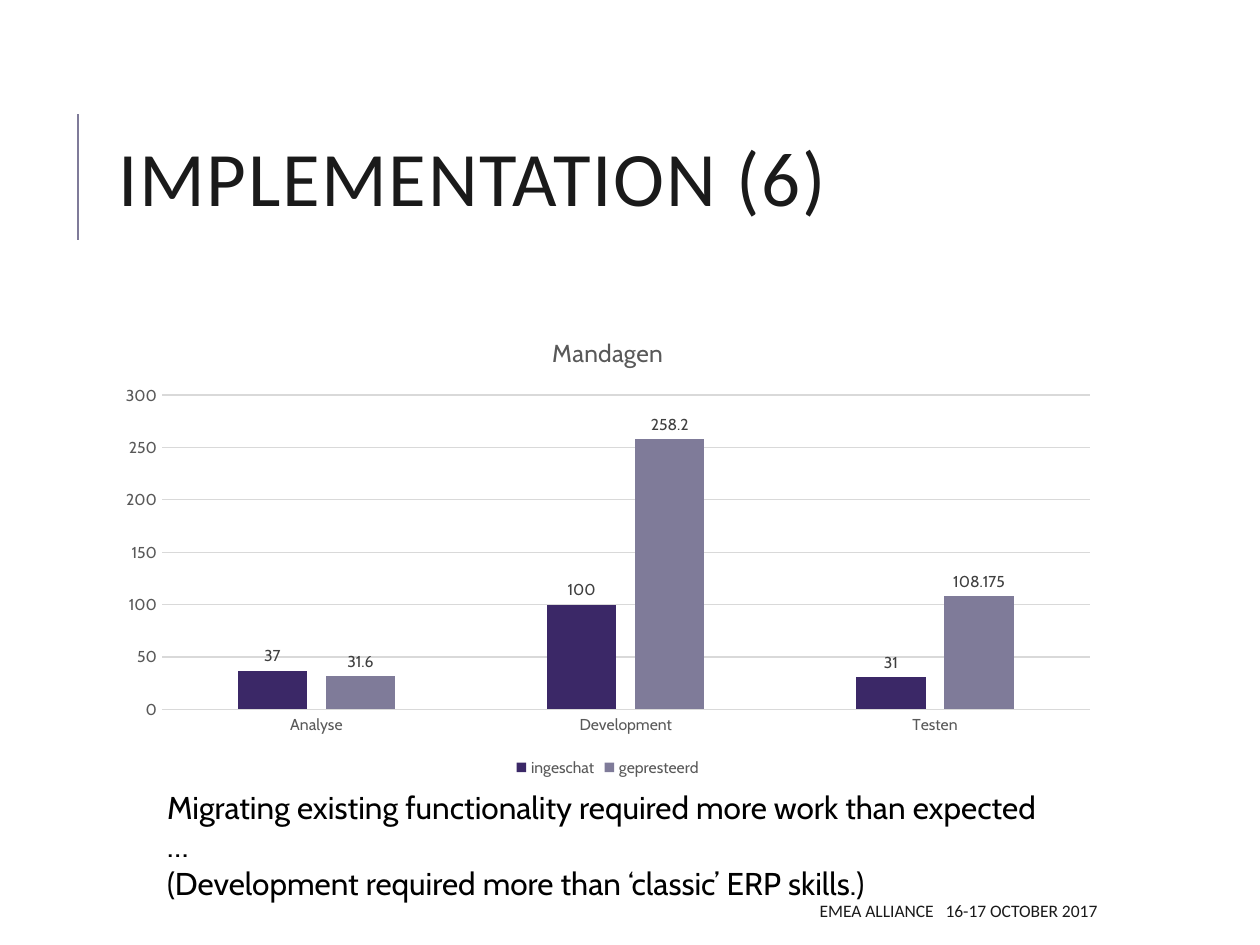
from lxml.etree import SubElement
from pptx import Presentation
from pptx.chart.data import CategoryChartData
from pptx.dml.color import RGBColor
from pptx.enum.chart import XL_CHART_TYPE as ChartType
from pptx.enum.chart import XL_LABEL_POSITION as LabelPosition
from pptx.enum.chart import XL_LEGEND_POSITION as LegendPosition
from pptx.enum.chart import XL_TICK_MARK as TickMark
from pptx.enum.shapes import MSO_CONNECTOR as Connector
from pptx.enum.text import MSO_ANCHOR as Anchor
from pptx.enum.text import PP_ALIGN as Align
from pptx.oxml.ns import qn
from pptx.util import Cm, Pt

BLACK = RGBColor(0x00, 0x00, 0x00)
INK = RGBColor(0x1A, 0x1A, 0x1A)
LABEL_GREY = RGBColor(0x40, 0x40, 0x40)
AXIS_GREY = RGBColor(0x59, 0x59, 0x59)
GRID_GREY = RGBColor(0xD9, 0xD9, 0xD9)
PURPLE = RGBColor(0x3B, 0x28, 0x67)
LAVENDER = RGBColor(0x7F, 0x7B, 0x99)

LEFT, WIDTH = Cm(2.13), Cm(20.24)

TITLE_FONT = {"name": "Calibri", "size": Pt(44), "color": INK}
FOOTER_FONT = {"name": "Calibri", "size": Pt(10), "color": INK}
REMARK_FONT = {"name": "Cabin", "size": Pt(18), "color": BLACK}
CHART_FONT = {"name": "Cabin", "size": Pt(10), "color": BLACK}
CHART_TITLE_FONT = {"name": "Cabin", "size": Pt(14), "color": AXIS_GREY, "bold": False}
AXIS_FONT = {"name": "Cabin", "size": Pt(9), "color": AXIS_GREY}
LABEL_FONT = {"name": "Cabin", "size": Pt(9), "color": LABEL_GREY}

CATEGORIES = ["Analyse", "Development", "Testen"]
SERIES = [
    ("ingeschat", [37, 100, 31], PURPLE),
    ("gepresteerd", [31.6, 258.2, 108.175], LAVENDER),
]


def format_font(font, values):
    for name, value in values.items():
        if name == "color":
            font.color.rgb = value
        else:
            setattr(font, name, value)


def format_line(line, color, width):
    line.color.rgb = color
    line.width = Pt(width)


def add_text(page, area, lines, font, anchor=Anchor.TOP, **para_format):
    """Add a wrapping text box with one paragraph per line and return it."""
    box = page.shapes.add_textbox(*area)
    frame = box.text_frame
    frame.word_wrap = True
    frame.vertical_anchor = anchor
    frame.text = "\n".join(lines)
    for para in frame.paragraphs:
        for name, value in para_format.items():
            setattr(para, name, value)
        for span in para.runs:
            format_font(span.font, font)
    return box


def add_title(page, text):
    area = LEFT, Cm(1.63), WIDTH, Cm(4.17)
    box = add_text(page, area, [text], TITLE_FONT, Anchor.MIDDLE, line_spacing=0.8)
    span = box.text_frame.paragraphs[0].runs[0]
    span.font._element.set("spc", "100")


def add_accent_line(page):
    x = Cm(1.57)
    accent = page.shapes.add_connector(Connector.STRAIGHT, x, Cm(4.83), x, Cm(2.29))
    format_line(accent.line, LAVENDER, 1.5)
    SubElement(accent._element.spPr, qn("a:effectLst"))


def format_axes(chart):
    for axis in (chart.category_axis, chart.value_axis):
        axis.major_tick_mark = axis.minor_tick_mark = TickMark.NONE
        format_font(axis.tick_labels.font, AXIS_FONT)
    format_line(chart.category_axis.format.line, GRID_GREY, 0.75)
    values = chart.value_axis
    values.minimum_scale, values.maximum_scale, values.major_unit = 0, 300, 50
    values.format.line.fill.background()
    values.has_major_gridlines = True
    format_line(values.major_gridlines.format.line, GRID_GREY, 0.75)


def format_series(plot):
    plot.gap_width = 219
    plot.overlap = -27
    plot.vary_by_categories = False
    for series, (_, _, color) in zip(plot.series, SERIES):
        series.format.fill.solid()
        series.format.fill.fore_color.rgb = color
        labels = series.data_labels
        labels.show_value = True
        labels.position = LabelPosition.OUTSIDE_END
        format_font(labels.font, LABEL_FONT)


def add_days_chart(page):
    data = CategoryChartData()
    data.categories = CATEGORIES
    for name, values, _ in SERIES:
        data.add_series(name, values)
    area = LEFT, Cm(6.35), WIDTH, Cm(9.42)
    chart = page.shapes.add_chart(ChartType.COLUMN_CLUSTERED, *area, data).chart
    format_font(chart.font, CHART_FONT)

    chart.has_title = True
    title = chart.chart_title
    title.include_in_layout = False
    title.text_frame.text = "Mandagen"
    format_font(title.text_frame.paragraphs[0].runs[0].font, CHART_TITLE_FONT)

    chart.has_legend = True
    chart.legend.position = LegendPosition.BOTTOM
    chart.legend.include_in_layout = False
    format_font(chart.legend.font, AXIS_FONT)

    format_axes(chart)
    format_series(chart.plots[0])


def main():
    deck = Presentation()
    deck.slide_width, deck.slide_height = Cm(25.4), Cm(19.05)
    page = deck.slides.add_slide(deck.slide_layouts[6])

    add_accent_line(page)
    add_title(page, "IMPLEMENTATION (6)")
    add_text(page, (Cm(10.08), Cm(17.98), Cm(12.29), Cm(0.76)),
             ["EMEA ALLIANCE   16-17 OCTOBER 2017"],
             FOOTER_FONT, Anchor.MIDDLE, alignment=Align.RIGHT)
    add_days_chart(page)
    add_text(page, (Cm(3.12), Cm(15.77), Cm(18.26), Cm(1.8)),
             ["Migrating existing functionality required more work than expected …",
              "(Development required more than ‘classic’ ERP skills.)"],
             REMARK_FONT)

    deck.save("out.pptx")


if __name__ == "__main__":
    main()
